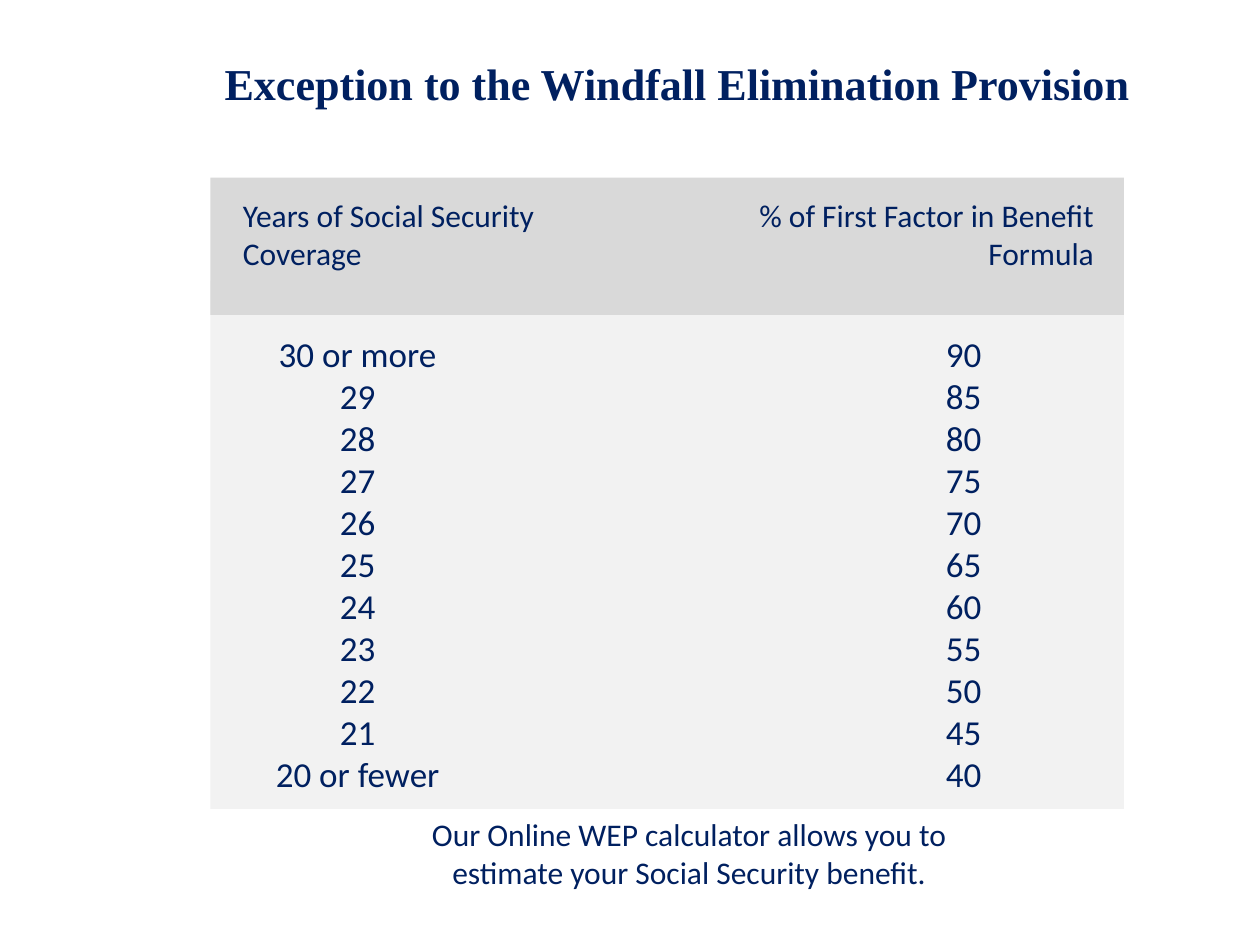
import pptx
import pptx.util
import pptx.dml.color
import pptx.enum.shapes
import pptx.enum.text
import pptx.oxml.ns
from lxml import etree

Inches = pptx.util.Inches
Align = pptx.enum.text.PP_ALIGN
Anchor = pptx.enum.text.MSO_ANCHOR

NAVY = pptx.dml.color.RGBColor(0x00, 0x20, 0x60)
GRAY = pptx.dml.color.RGBColor(0xD9, 0xD9, 0xD9)
PALE = pptx.dml.color.RGBColor(0xF2, 0xF2, 0xF2)

HEAD = {"name": "Times New Roman", "size": pptx.util.Pt(25.2), "bold": True}
NOTE = {"name": "Calibri", "size": pptx.util.Pt(18)}
BODY = {"name": "Calibri", "size": pptx.util.Pt(20)}

STOPS = (1.32, 6.13)
YEARS = ["30 or more", *map(str, range(29, 20, -1)), "20 or fewer"]
RATES = range(90, 39, -5)


def add_panel(slide, box, color):
    kind = pptx.enum.shapes.MSO_SHAPE.RECTANGLE
    panel = slide.shapes.add_shape(kind, *map(Inches, box))
    panel.shadow.inherit = False
    panel.fill.solid()
    panel.fill.fore_color.rgb = color
    panel.line.fill.background()


def set_tabs(para, stops):
    props = para._p.get_or_add_pPr()
    tabs = etree.SubElement(props, pptx.oxml.ns.qn("a:tabLst"))
    for stop in stops:
        tab = etree.SubElement(tabs, pptx.oxml.ns.qn("a:tab"))
        tab.set("pos", str(Inches(stop)))
        tab.set("algn", "ctr")


def add_text(slide, box, lines, style, align=Align.LEFT,
             anchor=Anchor.TOP, stops=()):
    frame = slide.shapes.add_textbox(*map(Inches, box)).text_frame
    frame.word_wrap = True
    frame.vertical_anchor = anchor
    frame.text = "\n".join(lines)
    for para in frame.paragraphs:
        para.alignment = align
        if stops:
            set_tabs(para, stops)
        for run in para.runs:
            run.font.color.rgb = NAVY
            for key, value in style.items():
                setattr(run.font, key, value)


def main():
    deck = pptx.Presentation()
    deck.slide_width, deck.slide_height = Inches(10), Inches(7.5)
    slide = deck.slides.add_slide(deck.slide_layouts[6])

    # Title
    add_text(slide, (0.75, 0.35, 9.25, 0.62),
             ["Exception to the Windfall Elimination Provision"],
             HEAD, Align.CENTER, Anchor.MIDDLE)

    # Panels behind the rows and the column heads
    add_panel(slide, (1.67, 2.23, 7.25, 4.19), PALE)
    add_panel(slide, (1.67, 1.41, 7.25, 1.09), GRAY)

    # Column heads
    add_text(slide, (1.83, 1.51, 3.08, 0.91),
             ["Years of Social Security Coverage"], NOTE)
    add_text(slide, (5.7, 1.51, 3.08, 0.91),
             ["% of First Factor in Benefit Formula"], NOTE, Align.RIGHT)

    # Rows, centred on two tab stops
    rows = [f"\t{year}\t{rate}" for year, rate in zip(YEARS, RATES)]
    add_text(slide, (1.42, 2.59, 6.75, 3.83), rows, BODY, stops=STOPS)

    # Closing note
    add_text(slide, (1.22, 6.42, 8.5, 0.91),
             ["Our Online WEP calculator allows you to\v"
              "estimate your Social Security benefit."],
             NOTE, Align.CENTER)

    deck.save("out.pptx")


if __name__ == "__main__":
    main()
